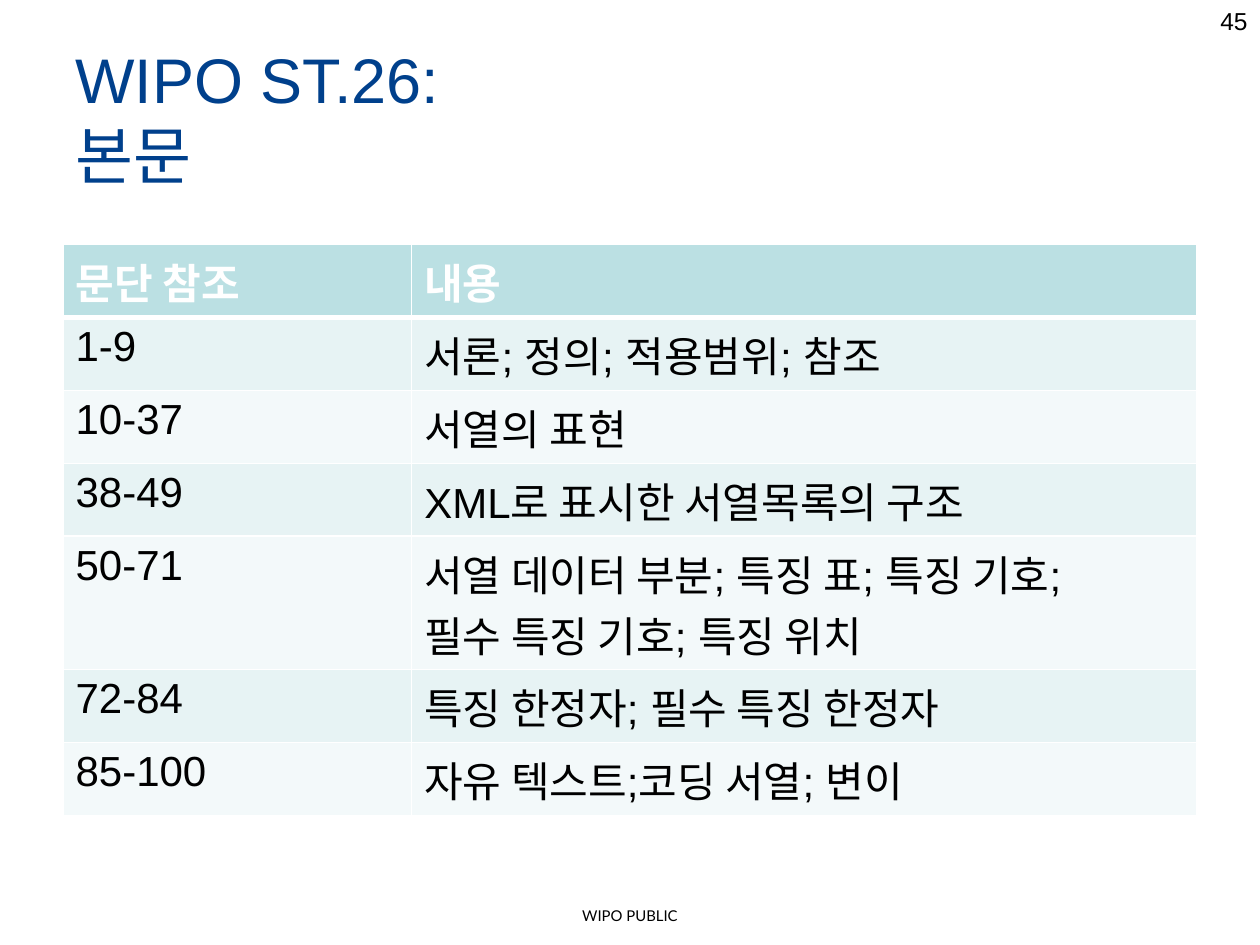
import pptx
import pptx.dml.color
import pptx.enum.text
import pptx.oxml.ns
import pptx.util
from lxml import etree

Cm = pptx.util.Cm
Pt = pptx.util.Pt
RGBColor = pptx.dml.color.RGBColor
Align = pptx.enum.text.PP_ALIGN
Anchor = pptx.enum.text.MSO_ANCHOR

BLACK = RGBColor(0x00, 0x00, 0x00)
WHITE = RGBColor(0xFF, 0xFF, 0xFF)
NAVY = RGBColor(0x00, 0x40, 0x8C)
HEADER_TEAL = RGBColor(0xBB, 0xE0, 0xE3)
BANDS = [RGBColor(0xE7, 0xF3, 0xF4), RGBColor(0xF3, 0xF9, 0xFA)]

FOOTER = ["WIPO PUBLIC"]
TITLE = ["WIPO ST.26: ", "본문"]
PAGE_NUMBER = ["45"]
ROWS = [
    ("문단 참조", ["내용"]),
    ("1-9", ["서론; 정의; 적용범위; 참조"]),
    ("10-37", ["서열의 표현"]),
    ("38-49", ["XML로 표시한 서열목록의 구조"]),
    ("50-71", ["서열 데이터 부분; 특징 표; 특징 기호;", "필수 특징 기호; 특징 위치"]),
    ("72-84", ["특징 한정자; 필수 특징 한정자"]),
    ("85-100", ["자유 텍스트;코딩 서열; 변이"]),
]
COLUMN_WIDTHS = [7.03, 15.83]
LINE_HEIGHT = 1.22
CELL_PADDING = 0.25


def add_span(para, text, size, color, font="Arial", bold=False):
    span = para.add_run()
    span.text = text
    span.font.size = Pt(size)
    span.font.name = font
    span.font.bold = bold
    span.font.color.rgb = color


def add_text(page, place, lines, size, color, font="Arial",
             align=Align.LEFT, anchor=Anchor.TOP):
    box = page.shapes.add_textbox(*(Cm(length) for length in place))
    frame = box.text_frame
    frame.word_wrap = True
    frame.vertical_anchor = anchor
    para = frame.paragraphs[0]
    para.alignment = align
    for index, line in enumerate(lines):
        if index:
            para.add_line_break()
        add_span(para, line, size, color, font)


def set_borders(cell, widths):
    properties = cell._tc.get_or_add_tcPr()
    for side, width in widths.items():
        line = etree.SubElement(properties, pptx.oxml.ns.qn(f"a:ln{side}"), w=str(Pt(width)))
        fill = etree.SubElement(line, pptx.oxml.ns.qn("a:solidFill"))
        etree.SubElement(fill, pptx.oxml.ns.qn("a:srgbClr"), val=str(WHITE))


def fill_cell(cell, lines, row_index):
    header = row_index == 0
    set_borders(cell, {"L": 1, "R": 1, "T": 3 if row_index == 1 else 1, "B": 3 if header else 1})
    cell.fill.solid()
    cell.fill.fore_color.rgb = HEADER_TEAL if header else BANDS[(row_index - 1) % 2]
    frame = cell.text_frame
    for index, line in enumerate(lines):
        para = frame.add_paragraph() if index else frame.paragraphs[0]
        add_span(para, line, 24, WHITE if header else BLACK, bold=header)


def add_contents_table(page):
    heights = [LINE_HEIGHT * len(lines) + CELL_PADDING for _, lines in ROWS]
    table = page.shapes.add_table(
        len(ROWS), len(COLUMN_WIDTHS), Cm(1.27), Cm(4.93),
        Cm(sum(COLUMN_WIDTHS)), Cm(sum(heights))).table
    for column, width in zip(table.columns, COLUMN_WIDTHS):
        column.width = Cm(width)
    for index, (reference, lines) in enumerate(ROWS):
        table.rows[index].height = Cm(heights[index])
        fill_cell(table.cell(index, 0), [reference], index)
        fill_cell(table.cell(index, 1), lines, index)


def main():
    deck = pptx.Presentation()
    deck.slide_width, deck.slide_height = Cm(25.4), Cm(19.05)
    page = deck.slides.add_slide(deck.slide_layouts[6])
    add_text(page, (0, 18.16, 25.4, 0.61), FOOTER, 8.5, BLACK, "Lato", Align.CENTER)
    add_text(page, (1.27, 0.76, 22.86, 3.18), TITLE, 36, NAVY, anchor=Anchor.MIDDLE)
    add_contents_table(page)
    add_text(page, (19.48, 0, 5.92, 1.32), PAGE_NUMBER, 14, BLACK, align=Align.RIGHT)
    deck.save("out.pptx")


if __name__ == "__main__":
    main()
